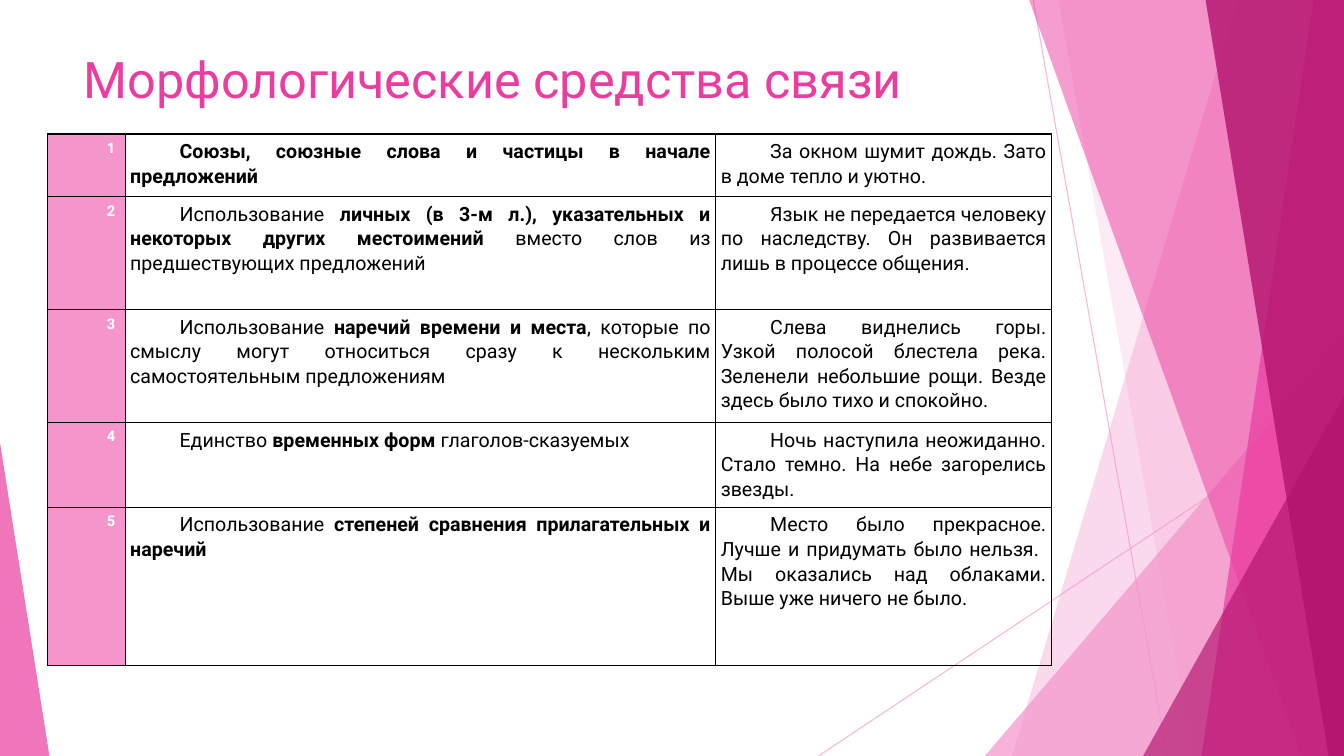
from lxml.etree import SubElement
from pptx import Presentation
from pptx.dml.color import RGBColor
from pptx.enum.shapes import MSO_CONNECTOR as Connector, MSO_SHAPE as Preset
from pptx.enum.text import MSO_ANCHOR as Anchor, PP_ALIGN as Align
from pptx.oxml.ns import qn
from pptx.util import Inches, Pt

WIDTH, HEIGHT = Inches(13.33), Inches(7.5)
FONT = "Roboto"
COLORS = {"pale": "F496CB", "pink": "EB3D9F", "plum": "B2136D",
          "black": "000000", "white": "FFFFFF"}

# Positions are percentages of the slide's width and height.
RAYS = [((76.88, 0), (86.85, 100)), ((100, 53.73), (60.9, 100))]
# Top x, bottom x, colour, opacity
BACK_FACETS = [(92.1, 75.3, "pale", 36), (78.75, 88.73, "pale", 20)]
FRONT_FACETS = [(76.58, 96.83, "pink", 50), (97.73, 89.4, "pink", 70),
                (89.7, 98.85, "plum", 80)]
COLUMNS = [5.78, 43.95, 24.98]
ROWS = [8.27, 14.93, 14.93, 11.07, 20.93]

# Asterisks enclose bold words.
MEANS = [
    ("*Союзы, союзные слова и частицы в начале предложений*",
     "За окном шумит дождь. Зато в доме тепло и уютно."),
    ("Использование *личных (в 3-м л.), указательных и некоторых других "
     "местоимений* вместо слов из предшествующих предложений",
     "Язык не передается человеку по наследству. Он развивается лишь "
     "в процессе общения."),
    ("Использование *наречий времени и места*, которые по смыслу могут "
     "относиться сразу к нескольким самостоятельным предложениям",
     "Слева виднелись горы. Узкой полосой блестела река. Зеленели "
     "небольшие рощи. Везде здесь было тихо и спокойно."),
    ("Единство *временных форм *глаголов-сказуемых",
     "Ночь наступила неожиданно. Стало темно. На небе загорелись звезды."),
    ("Использование *степеней сравнения прилагательных и наречий*",
     "Место было прекрасное. Лучше и придумать было нельзя. \n"
     "Мы оказались над облаками. Выше уже ничего не было."),
]


def across(percent):
    return round(WIDTH * percent / 100)


def down(percent):
    return round(HEIGHT * percent / 100)


def rgb(name):
    return RGBColor.from_string(COLORS[name])


def set_opacity(element, percent):
    color = next(element.iter(qn("a:srgbClr")))
    SubElement(color, qn("a:alpha"), val=str(percent * 1000))


def add_ray(page, start, end):
    ray = page.shapes.add_connector(
        Connector.STRAIGHT, across(start[0]), down(start[1]),
        across(end[0]), down(end[1]))
    ray.line.color.rgb = rgb("pale")
    ray.line.width = Pt(0.75)
    properties = ray._element.spPr
    set_opacity(properties, 70)
    SubElement(properties, qn("a:effectLst"))


def paint(shape, color, opacity):
    shape.shadow.inherit = False
    shape.fill.solid()
    shape.fill.fore_color.rgb = rgb(color)
    set_opacity(shape._element.spPr, opacity)
    shape.line.fill.background()


def add_facet(page, top_x, bottom_x, color, opacity):
    """Fill from a slanted edge to the slide's right side."""
    builder = page.shapes.build_freeform(across(top_x), 0)
    builder.add_line_segments(
        [(WIDTH, 0), (WIDTH, HEIGHT), (across(bottom_x), HEIGHT)])
    paint(builder.convert_to_shape(), color, opacity)


def add_corner(page, left, top, width, apex, color, opacity):
    """Add a triangle that stands on the slide's bottom edge."""
    corner = page.shapes.add_shape(
        Preset.ISOSCELES_TRIANGLE, across(left), down(top),
        across(width), down(100 - top))
    corner.adjustments[0] = apex
    paint(corner, color, opacity)


def set_font(font, size, color):
    font.name = FONT
    font.size = Pt(size)
    font.color.rgb = rgb(color)


def add_title(page, text):
    box = page.shapes.add_textbox(across(5.48), down(5.73), across(70.5), down(12))
    box.text_frame.word_wrap = True
    box.text_frame.vertical_anchor = Anchor.TOP
    para = box.text_frame.paragraphs[0]
    set_font(para.font, 36, "pink")
    para.add_run().text = text


def add_borders(cell):
    properties = cell._tc.get_or_add_tcPr()
    for side in ("lnL", "lnR", "lnT", "lnB"):
        border = SubElement(properties, qn(f"a:{side}"), w=str(Pt(1)))
        fill = SubElement(border, qn("a:solidFill"))
        SubElement(fill, qn("a:srgbClr"), val=COLORS["black"])


def write_cell(cell, text, size, color, align):
    cell.margin_left = cell.margin_right = Inches(0.05)
    cell.margin_top = cell.margin_bottom = Inches(0.05)
    para = cell.text_frame.paragraphs[0]
    para.alignment = align
    para.line_spacing = 1.06
    para.space_after = Pt(8)
    para._p.get_or_add_pPr().set("indent", str(Inches(0.49)))
    set_font(para.font, size, color)
    for index, part in enumerate(text.split("*")):
        for line_index, line in enumerate(part.split("\n")):
            if line_index:
                para.add_line_break()
            if line:
                span = para.add_run()
                span.text = line
                span.font.bold = index % 2 == 1


def add_means_table(page):
    table = page.shapes.add_table(
        len(ROWS), len(COLUMNS), across(3.53), down(17.73),
        across(sum(COLUMNS)), down(sum(ROWS))).table
    table.first_row = table.horz_banding = False
    for column, width in zip(table.columns, COLUMNS):
        column.width = across(width)
    for number, (row, height, means) in enumerate(zip(table.rows, ROWS, MEANS), 1):
        row.height = down(height)
        for cell in row.cells:
            add_borders(cell)
            cell.fill.background()
        number_cell, *text_cells = row.cells
        number_cell.fill.solid()
        number_cell.fill.fore_color.rgb = rgb("pale")
        write_cell(number_cell, f"*{number}*", 10.5, "white", Align.CENTER)
        for cell, text in zip(text_cells, means):
            write_cell(cell, text, 14, "black", Align.JUSTIFY)


def main():
    deck = Presentation()
    deck.slide_width, deck.slide_height = WIDTH, HEIGHT
    page = deck.slides.add_slide(deck.slide_layouts[6])
    for start, end in RAYS:
        add_ray(page, start, end)
    for facet in BACK_FACETS:
        add_facet(page, *facet)
    add_corner(page, 73.28, 44.4, 26.72, 1, "pale", 72)
    for facet in FRONT_FACETS:
        add_facet(page, *facet)
    add_corner(page, 85.05, 52.4, 14.95, 1, "plum", 66)
    add_corner(page, 0, 58.53, 3.68, 0, "pink", 70)
    add_title(page, "Морфологические средства связи")
    add_means_table(page)
    deck.save("out.pptx")


if __name__ == "__main__":
    main()
